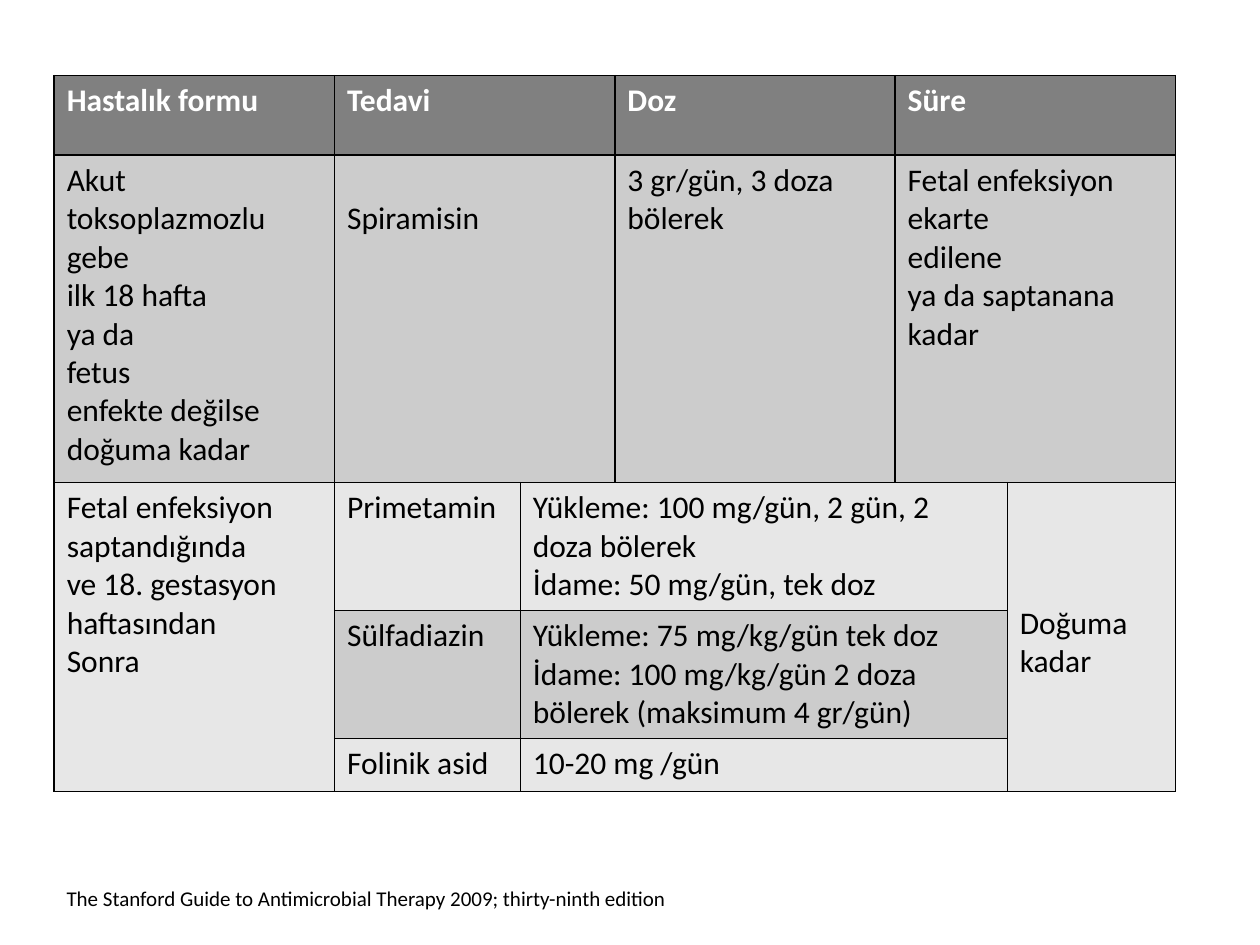
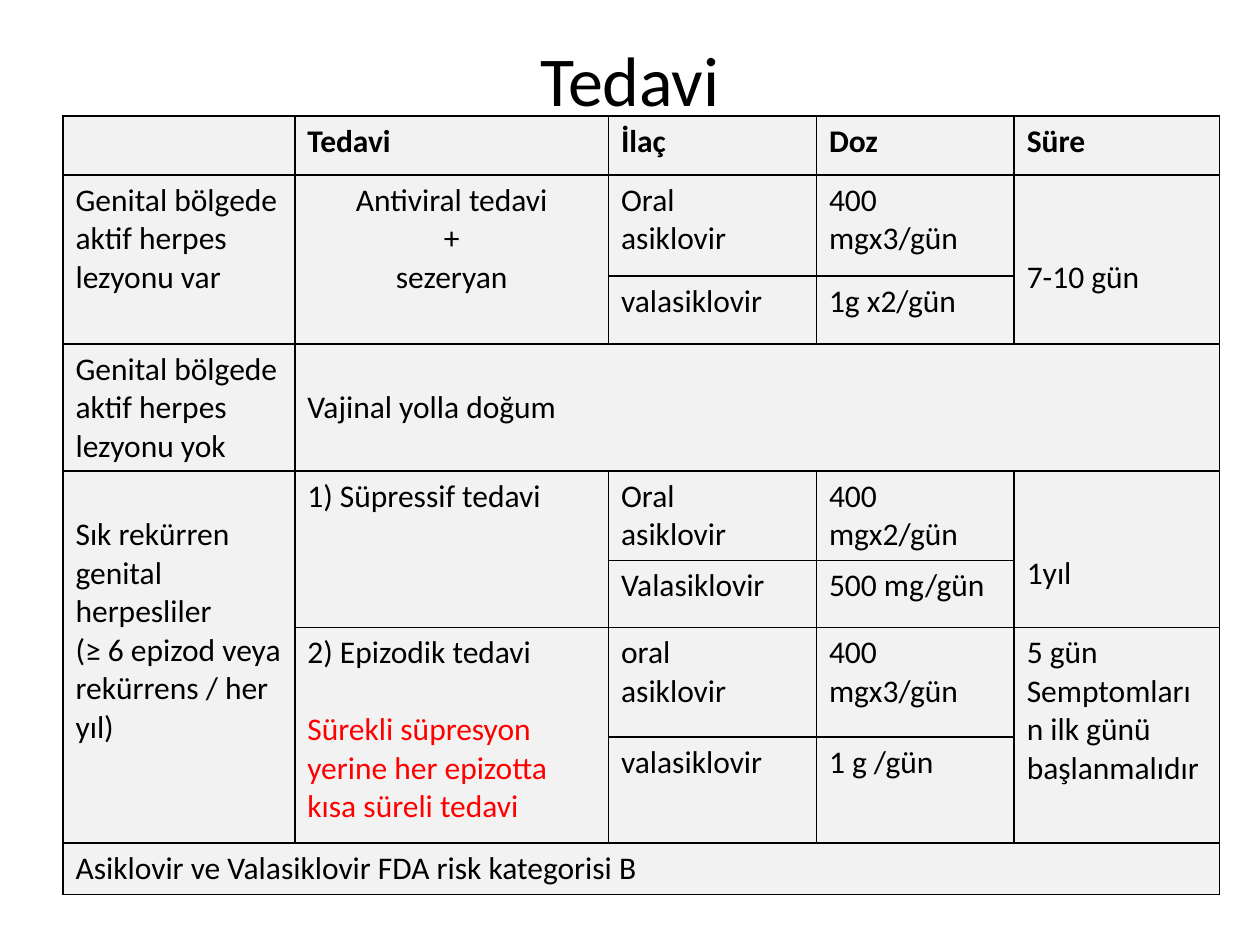
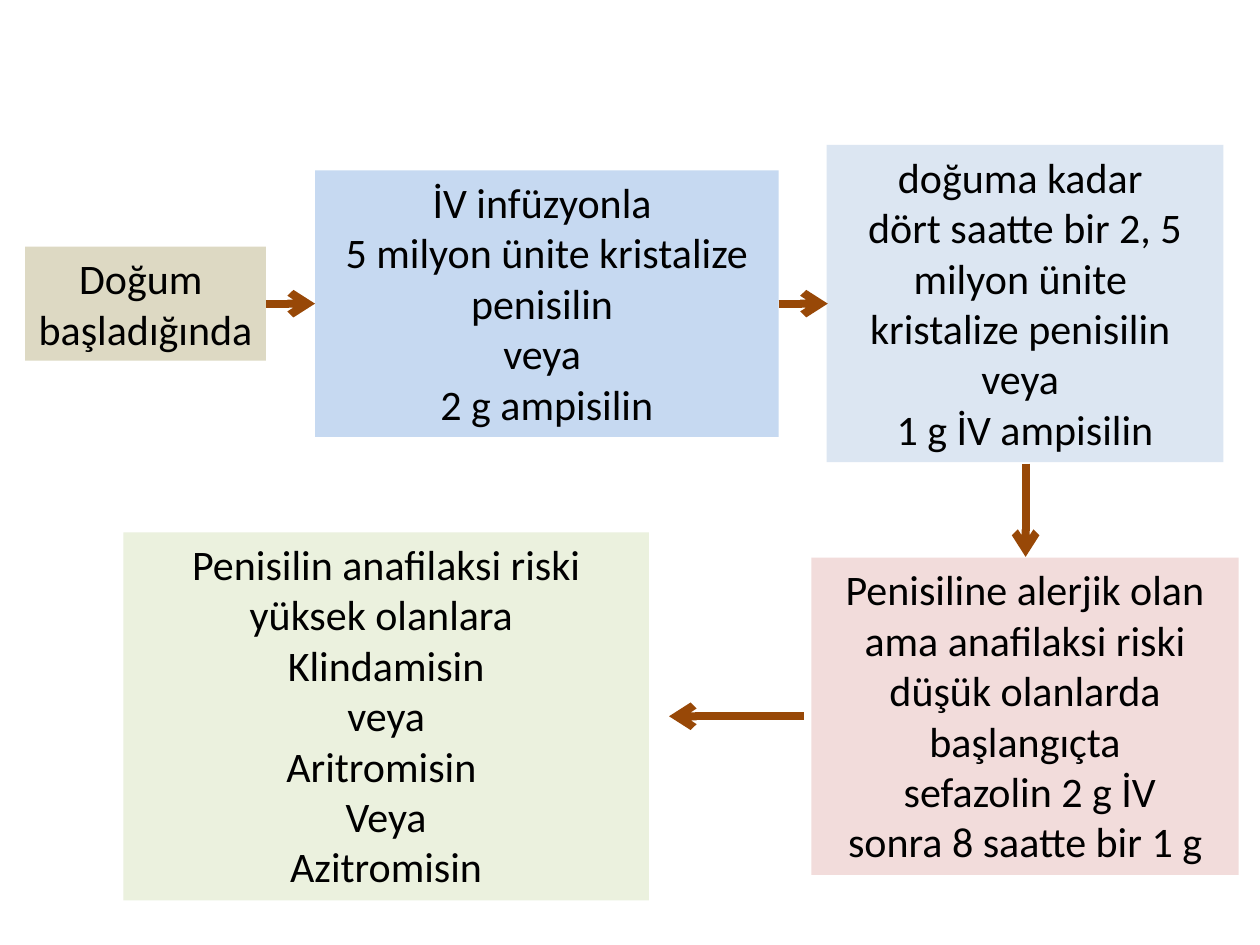
from dataclasses import dataclass
from typing import Any, NamedTuple

from lxml.etree import SubElement
from pptx import Presentation
from pptx.dml.color import RGBColor
from pptx.enum.shapes import MSO_CONNECTOR, MSO_SHAPE
from pptx.enum.text import MSO_ANCHOR, PP_ALIGN
from pptx.oxml.ns import qn
from pptx.slide import Slide
from pptx.text.text import TextFrame
from pptx.util import Emu, Inches, Pt

SLIDE_WIDTH, SLIDE_HEIGHT = Inches(10), Inches(7.5)
GRID_COLUMNS, GRID_ROWS = 100, 75

FONT = "Calibri"
BLACK, WHITE, RED = "000000", "FFFFFF", "FF0000"
HEADER_GRAY, DARK_GRAY, LIGHT_GRAY = "808080", "CCCCCC", "E7E7E7"
PALE_GRAY = "F2F2F2"
ARROW_BROWN = "984807"

CELL_MARGIN = 0.5
CELL_LINE = 3.05
CELL_LINE_POINTS = 22
BOX_LINE = 4.03
UPPER_MIDDLE, LOWER_MIDDLE = 24.1, 56.85


class Area(NamedTuple):
    left: float
    top: float
    width: float
    height: float


class Style(NamedTuple):
    size: int = 18
    color: str = BLACK
    bold: bool = False
    alignment: PP_ALIGN = PP_ALIGN.LEFT


BODY = Style()
HEADING = Style(bold=True)
WHITE_HEADING = Style(color=WHITE, bold=True)
CENTERED = Style(alignment=PP_ALIGN.CENTER)
WARNING = Style(color=RED)
TITLE = Style(size=40, alignment=PP_ALIGN.CENTER)
FOOTNOTE = Style(size=12)
STEP = Style(size=24, alignment=PP_ALIGN.CENTER)


@dataclass(frozen=True)
class Cell:
    row: int
    column: int
    text: str
    fill: str = PALE_GRAY
    rows: int = 1
    columns: int = 1
    lowered_lines: int = 0
    style: Style = BODY
    warning: str = ""


@dataclass(frozen=True)
class Step:
    left: float
    middle: float
    width: float
    lines: int
    fill: str
    text: str
    wrap: bool = True


class Arrow(NamedTuple):
    from_column: float
    from_row: float
    to_column: float
    to_row: float


TOXOPLASMOSIS_COLUMNS = (22.25, 14.75, 7.5, 22.25, 8.9, 13.35)
TOXOPLASMOSIS_ROWS = (6.3, 26, 10.1, 10.1, 4.2)
TOXOPLASMOSIS_CELLS = (
    Cell(0, 0, "Hastalık formu", HEADER_GRAY, style=WHITE_HEADING),
    Cell(0, 1, "Tedavi", HEADER_GRAY, columns=2, style=WHITE_HEADING),
    Cell(0, 3, "Doz", HEADER_GRAY, style=WHITE_HEADING),
    Cell(0, 4, "Süre", HEADER_GRAY, columns=2, style=WHITE_HEADING),
    Cell(1, 0, "Akut\ntoksoplazmozlu\ngebe\nilk 18 hafta\nya da\nfetus\n"
               "enfekte değilse\ndoğuma kadar", DARK_GRAY),
    Cell(1, 1, "Spiramisin", DARK_GRAY, columns=2, lowered_lines=1),
    Cell(1, 3, "3 gr/gün, 3 doza bölerek", DARK_GRAY),
    Cell(1, 4, "Fetal enfeksiyon\nekarte\nedilene\nya da saptanana kadar",
         DARK_GRAY, columns=2),
    Cell(2, 0, "Fetal enfeksiyon\nsaptandığında\nve 18. gestasyon\n"
               "haftasından\nSonra", LIGHT_GRAY, rows=3),
    Cell(2, 1, "Primetamin", LIGHT_GRAY),
    Cell(2, 2, "Yükleme: 100 mg/gün, 2 gün, 2 doza bölerek\n"
               "İdame: 50 mg/gün, tek doz", LIGHT_GRAY, columns=3),
    Cell(2, 5, "Doğuma kadar", LIGHT_GRAY, rows=3, lowered_lines=3),
    Cell(3, 1, "Sülfadiazin", DARK_GRAY),
    Cell(3, 2, "Yükleme: 75 mg/kg/gün tek doz\n"
               "İdame: 100 mg/kg/gün 2 doza bölerek (maksimum 4 gr/gün)",
         DARK_GRAY, columns=3),
    Cell(4, 1, "Folinik asid", LIGHT_GRAY),
    Cell(4, 2, "10-20 mg /gün", LIGHT_GRAY, columns=3),
)

HERPES_COLUMNS = (18.4, 24.9, 16.5, 15.7, 16.3)
HERPES_ROWS = (4.7, 8, 5.4, 10.1, 7.1, 5.3, 8.7, 8.4, 4.1)
HERPES_CELLS = (
    *(Cell(0, column, heading, style=HEADING) for column, heading
      in enumerate(("", "Tedavi", "İlaç", "Doz", "Süre"))),
    Cell(1, 0, "Genital bölgede aktif herpes lezyonu var", rows=2),
    Cell(1, 1, "Antiviral tedavi\n+\nsezeryan", rows=2, style=CENTERED),
    Cell(1, 2, "Oral\nasiklovir"),
    Cell(1, 3, "400 mgx3/gün"),
    Cell(1, 4, "7-10 gün", rows=2, lowered_lines=2),
    Cell(2, 2, "valasiklovir"),
    Cell(2, 3, "1g x2/gün"),
    Cell(3, 0, "Genital bölgede aktif herpes lezyonu yok"),
    Cell(3, 1, "Vajinal yolla doğum", columns=4, lowered_lines=1),
    Cell(4, 0, "Sık rekürren genital herpesliler\n"
               "(≥ 6 epizod veya rekürrens / her yıl)", rows=4, lowered_lines=1),
    Cell(4, 1, "1) Süpressif tedavi", rows=2),
    Cell(4, 2, "Oral\nasiklovir"),
    Cell(4, 3, "400 mgx2/gün"),
    Cell(4, 4, "1yıl", rows=2, lowered_lines=2),
    Cell(5, 2, "Valasiklovir"),
    Cell(5, 3, "500 mg/gün"),
    Cell(6, 1, "2) Epizodik tedavi", rows=2,
         warning="Sürekli süpresyon yerine her epizotta kısa süreli tedavi"),
    Cell(6, 2, "oral\nasiklovir"),
    Cell(6, 3, "400 mgx3/gün"),
    Cell(6, 4, "5 gün\nSemptomların ilk günü başlanmalıdır", rows=2),
    Cell(7, 2, "valasiklovir"),
    Cell(7, 3, "1 g /gün"),
    Cell(8, 0, "Asiklovir ve Valasiklovir FDA risk kategorisi B", columns=5),
)

DELIVERY_STEPS = (
    Step(2, UPPER_MIDDLE, 19.1, 2, "DDD9C3", "Doğum \nbaşladığında", wrap=False),
    Step(25, UPPER_MIDDLE, 36.8, 5, "C6D9F1",
         "İV infüzyonla \n5 milyon ünite kristalize penisilin \nveya \n"
         "2 g ampisilin"),
    Step(65.6, UPPER_MIDDLE, 31.5, 6, "DCE6F2",
         "doğuma kadar \ndört saatte bir 2, 5 milyon ünite \n"
         "kristalize penisilin \nveya \n1 g İV ampisilin"),
    Step(64.4, LOWER_MIDDLE, 33.9, 6, "F2DCDB",
         "Penisiline alerjik olan ama anafilaksi riski düşük olanlarda "
         "başlangıçta\n sefazolin 2 g İV\nsonra 8 saatte bir 1 g"),
    Step(9.8, LOWER_MIDDLE, 41.7, 7, "EBF1DE",
         "Penisilin anafilaksi riski yüksek olanlara \nKlindamisin\n veya \n"
         "Aritromisin \nVeya\nAzitromisin"),
)
DELIVERY_ARROWS = (
    Arrow(21.1, UPPER_MIDDLE, 25, UPPER_MIDDLE),
    Arrow(61.8, UPPER_MIDDLE, 65.7, UPPER_MIDDLE),
    Arrow(81.4, 36.8, 81.4, 44.2),
    Arrow(63.8, LOWER_MIDDLE, 53.1, LOWER_MIDDLE),
)


def across(columns: float) -> Emu:
    return Emu(round(SLIDE_WIDTH * columns / GRID_COLUMNS))


def down(rows: float) -> Emu:
    return Emu(round(SLIDE_HEIGHT * rows / GRID_ROWS))


def place(area: Area) -> tuple[Emu, Emu, Emu, Emu]:
    return across(area.left), down(area.top), across(area.width), down(area.height)


def color_of(code: str) -> RGBColor:
    return RGBColor.from_string(code)


def apply(target: Any, values: dict[str, Any]) -> None:
    for name, value in values.items():
        setattr(target, name, value)


def paint(fill: Any, code: str) -> None:
    fill.solid()
    fill.fore_color.rgb = color_of(code)


def format_paragraph(paragraph: Any, style: Style) -> None:
    paragraph.alignment = style.alignment
    apply(paragraph.font, {"name": FONT, "size": Pt(style.size), "bold": style.bold})
    paragraph.font.color.rgb = color_of(style.color)


def write(text_frame: TextFrame, text: str, style: Style) -> None:
    text_frame.text = text
    for paragraph in text_frame.paragraphs:
        format_paragraph(paragraph, style)


def add_text(slide: Slide, area: Area, text: str, style: Style,
             margin_top: float = CELL_MARGIN) -> None:
    text_frame = slide.shapes.add_textbox(*place(area)).text_frame
    apply(text_frame, {"word_wrap": True, "vertical_anchor": MSO_ANCHOR.TOP,
                       "margin_top": down(margin_top)})
    write(text_frame, text, style)


def add_borders(table_cell: Any) -> None:
    properties = table_cell._tc.get_or_add_tcPr()
    for side in ("lnL", "lnR", "lnT", "lnB"):
        border = SubElement(properties, qn(f"a:{side}"), w=str(Pt(1)))
        border_fill = SubElement(border, qn("a:solidFill"))
        SubElement(border_fill, qn("a:srgbClr"), val=BLACK)


def fill_cell(table: Any, cell: Cell) -> None:
    for row in range(cell.row, cell.row + cell.rows):
        for column in range(cell.column, cell.column + cell.columns):
            paint(table.cell(row, column).fill, cell.fill)
    table_cell = table.cell(cell.row, cell.column)
    if cell.rows * cell.columns > 1:
        table_cell.merge(table.cell(cell.row + cell.rows - 1,
                                    cell.column + cell.columns - 1))
    table_cell.margin_top = down(CELL_MARGIN + CELL_LINE * cell.lowered_lines)
    write(table_cell.text_frame, cell.text, cell.style)
    if cell.warning:
        paragraph = table_cell.text_frame.add_paragraph()
        paragraph.text = cell.warning
        paragraph.space_before = Pt(CELL_LINE_POINTS)
        format_paragraph(paragraph, WARNING)


def add_treatment_table(slide: Slide, left: float, top: float,
                        widths: tuple[float, ...], heights: tuple[float, ...],
                        cells: tuple[Cell, ...]) -> None:
    area = Area(left, top, sum(widths), sum(heights))
    table = slide.shapes.add_table(len(heights), len(widths), *place(area)).table
    apply(table, {"first_row": False, "horz_banding": False})
    for column, width in zip(table.columns, widths):
        column.width = across(width)
    for row, height in zip(table.rows, heights):
        row.height = down(height)
    for table_cell in table.iter_cells():
        add_borders(table_cell)
    for cell in cells:
        fill_cell(table, cell)


def add_step(slide: Slide, step: Step) -> None:
    height = BOX_LINE * step.lines + 2 * CELL_MARGIN
    area = Area(step.left, step.middle - height / 2, step.width, height)
    shape = slide.shapes.add_shape(MSO_SHAPE.RECTANGLE, *place(area))
    shape.shadow.inherit = False
    paint(shape.fill, step.fill)
    shape.line.fill.background()
    apply(shape.text_frame, {"word_wrap": step.wrap,
                             "vertical_anchor": MSO_ANCHOR.TOP})
    write(shape.text_frame, step.text, STEP)


def add_arrow(slide: Slide, arrow: Arrow) -> None:
    connector = slide.shapes.add_connector(
        MSO_CONNECTOR.STRAIGHT, across(arrow.from_column), down(arrow.from_row),
        across(arrow.to_column), down(arrow.to_row))
    paint(connector.line.fill, ARROW_BROWN)
    connector.line.width = Pt(4.5)
    properties = connector.element.spPr
    SubElement(properties.find(qn("a:ln")), qn("a:tailEnd"), type="arrow")
    SubElement(properties, qn("a:effectLst"))


def main() -> None:
    presentation = Presentation()
    apply(presentation, {"slide_width": SLIDE_WIDTH, "slide_height": SLIDE_HEIGHT})
    blank_layout = presentation.slide_layouts[6]
    toxoplasmosis, herpes, delivery = (
        presentation.slides.add_slide(blank_layout) for _ in range(3))

    add_treatment_table(toxoplasmosis, 4.3, 6, TOXOPLASMOSIS_COLUMNS,
                        TOXOPLASMOSIS_ROWS, TOXOPLASMOSIS_CELLS)
    add_text(toxoplasmosis, Area(4.3, 69.8, 89, 3),
             "The Stanford Guide to Antimicrobial Therapy 2009; thirty-ninth edition",
             FOOTNOTE)

    add_treatment_table(herpes, 5, 9.2, HERPES_COLUMNS, HERPES_ROWS, HERPES_CELLS)
    add_text(herpes, Area(5, 2.1, 90, 6.2), "Tedavi", TITLE, margin_top=0.8)

    for step in DELIVERY_STEPS:
        add_step(delivery, step)
    for arrow in DELIVERY_ARROWS:
        add_arrow(delivery, arrow)

    presentation.save("out.pptx")


if __name__ == "__main__":
    main()
